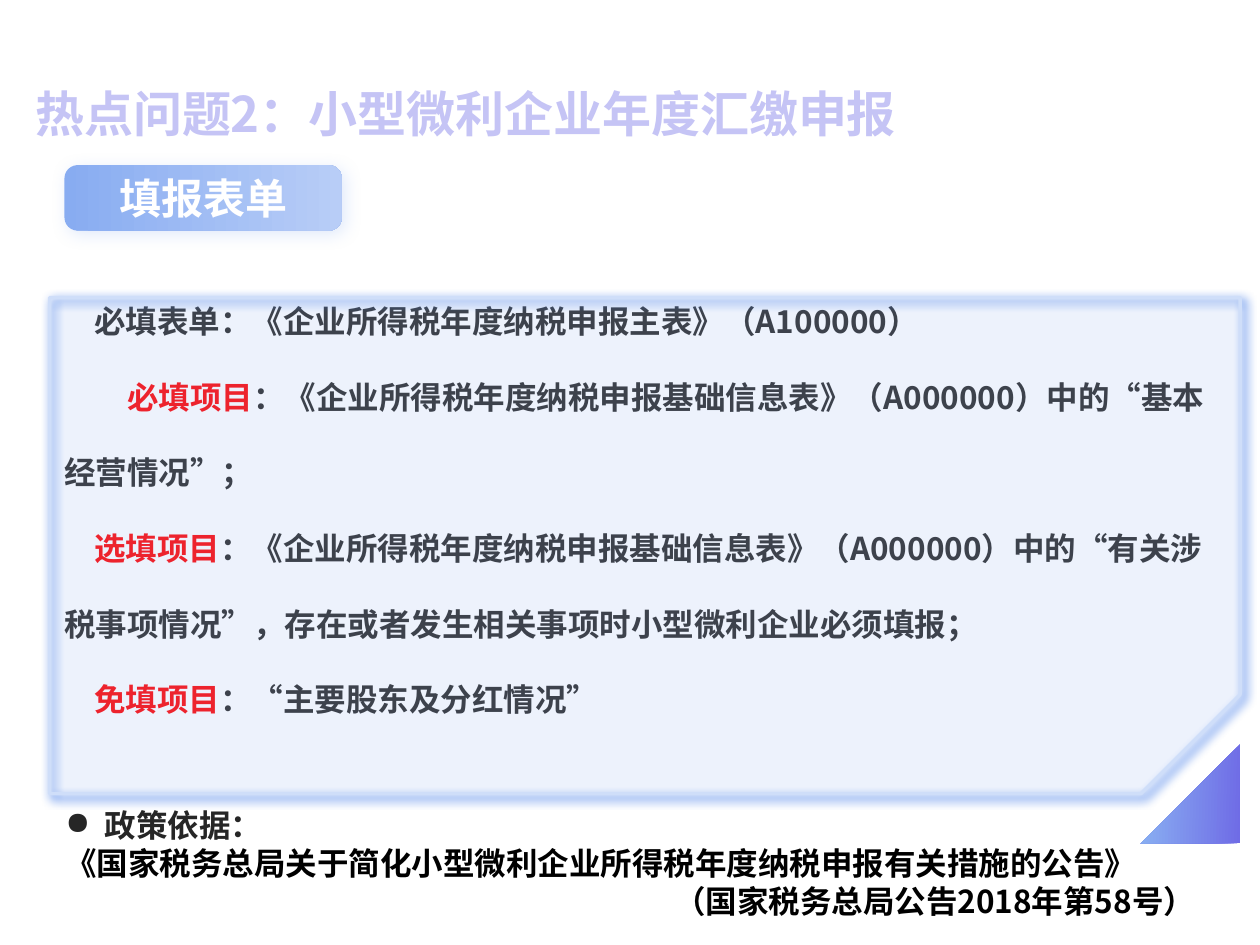
from dataclasses import dataclass

import pptx
import pptx.dml.color
import pptx.enum.shapes
import pptx.enum.text
import pptx.oxml
import pptx.oxml.ns
import pptx.util
from pptx.util import Cm

Align = pptx.enum.text.PP_ALIGN
Anchor = pptx.enum.text.MSO_ANCHOR
CJK = "Noto Sans CJK SC"
DARK, RED = "262626", "FF0000"
NS = 'xmlns:a="http://schemas.openxmlformats.org/drawingml/2006/main"'


@dataclass
class Item:
    label: str
    text: str
    color: str = RED
    indent: float = 0.6


@dataclass
class Glow:
    color: str
    alpha: int
    blur: float


ITEMS = [
    Item("必填表单", "：《企业所得税年度纳税申报主表》（A100000）", DARK),
    Item("必填项目", "：《企业所得税年度纳税申报基础信息表》（A000000）中的“基本经营情况”；",
         indent=1.27),
    Item("选填项目", "：《企业所得税年度纳税申报基础信息表》（A000000）中的“有关涉税事项情况”，"
         "存在或者发生相关事项时小型微利企业必须填报；"),
    Item("免填项目", "：“主要股东及分红情况”"),
]


def rgb(code: str):
    return pptx.dml.color.RGBColor.from_string(code)


def xml(text: str):
    """Parse one a: element, given without its namespace declaration."""
    head, rest = text.split(" ", 1)
    return pptx.oxml.parse_xml(f"{head} {NS} {rest}")


def write(par, text: str, *, size=18, color=DARK, font=CJK):
    run = par.add_run()
    run.text = text
    run.font.size = pptx.util.Pt(size)
    run.font.bold = True
    run.font.color.rgb = rgb(color)
    run.font.name = font
    run.font._element.append(xml(f'<a:ea typeface="{CJK}"/>'))
    return run


def lay(par, *, left=0.0, first=0.0, bullet="", align=Align.LEFT, space=1.0):
    """Set the indents (cm), bullet, alignment and spacing of a paragraph."""
    par.alignment = align
    par.line_spacing = space
    par.space_before = par.space_after = pptx.util.Pt(0)
    props = par._p.get_or_add_pPr()
    props.set("marL", str(Cm(left)))
    props.set("indent", str(Cm(first)))
    props.append(xml(f'<a:buChar char="{bullet}"/>' if bullet else "<a:buNone />"))


def place(shape, left: float, top: float, width: float, height: float):
    shape.left, shape.top = Cm(left), Cm(top)
    shape.width, shape.height = Cm(width), Cm(height)


def frame(shape, anchor=Anchor.TOP, inset=True):
    """Return the wrapped text frame, with or without its default insets."""
    box = shape.text_frame
    box.word_wrap = True
    box.auto_size = pptx.enum.text.MSO_AUTO_SIZE.NONE
    box.vertical_anchor = anchor
    if not inset:
        box.margin_left = box.margin_right = box.margin_top = box.margin_bottom = 0
    return box


def shade(shape, start: str, end: str, *, stop=1.0, angle=0):
    shape.fill.gradient()
    shape.fill.gradient_angle = angle
    for mark, color, pos in zip(shape.fill.gradient_stops, (start, end), (0, stop)):
        mark.color.rgb = rgb(color)
        mark.position = pos
    shape.line.fill.background()


def glow(shape, look: Glow):
    props = shape._element.spPr
    props.find(pptx.oxml.ns.qn("a:effectLst")).append(xml(
        f'<a:outerShdw blurRad="{pptx.util.Pt(look.blur)}" dist="{pptx.util.Pt(3)}"'
        f' dir="2700000" algn="tl" rotWithShape="0"><a:srgbClr val="{look.color}">'
        f'<a:alpha val="{look.alpha * 1000}"/></a:srgbClr></a:outerShdw>'))


def outline(slide, points: list):
    """Draw a closed polygon through points in cm."""
    pen = slide.shapes.build_freeform(*points[0], scale=Cm(1))
    pen.add_line_segments(points[1:], close=True)
    shape = pen.convert_to_shape()
    shape.shadow.inherit = False
    return shape


def main():
    deck = pptx.Presentation()
    deck.slide_width, deck.slide_height = Cm(25.4), Cm(19.05)
    slide = deck.slides.add_slide(deck.slide_layouts[1])
    title, body = slide.placeholders

    place(title, 0.71, 1.73, 22.07, 1.14)
    par = frame(title, Anchor.BOTTOM, inset=False).paragraphs[0]
    lay(par, space=1.5)
    run = write(par, "热点问题2：小型微利企业年度汇缴申报", size=28, color="C5C4F5")
    run.font._element.insert(0, xml(
        f'<a:ln w="{pptx.util.Pt(1.75)}"><a:solidFill><a:srgbClr val="6F6CE6"/>'
        "</a:solidFill></a:ln>"))

    place(body, 1.3, 5.33, 23.34, 6.81)
    box = frame(body, inset=False)
    for num, item in enumerate(ITEMS):
        par = box.add_paragraph() if num else box.paragraphs[0]
        lay(par, first=item.indent, space=2.0)
        write(par, item.label, color=item.color)
        write(par, item.text)

    corner = outline(slide, [(25.4, 14.63), (25.4, 16.66), (23.37, 16.66)])
    shade(corner, "6F6CE6", "88ACF1", stop=0.94, angle=178)

    panel = outline(slide, [(0.84, 5.72), (25.1, 5.72), (25.1, 14.15),
                            (23.37, 15.95), (0.84, 15.95)])
    panel.fill.solid()
    panel.fill.fore_color.rgb = rgb("FFFFFF")
    tint = panel._element.spPr.find(".//" + pptx.oxml.ns.qn("a:srgbClr"))
    tint.append(xml('<a:alpha val="10000"/>'))
    panel.line.color.rgb = rgb("CFDEF9")
    panel.line.width = pptx.util.Pt(2)
    glow(panel, Glow("3471E7", 10, 6))

    kind = pptx.enum.shapes.MSO_SHAPE.ROUNDED_RECTANGLE
    badge = slide.shapes.add_shape(kind, Cm(1.3), Cm(3.33), Cm(5.59), Cm(1.32))
    badge.adjustments[0] = 0.2
    badge.shadow.inherit = False
    shade(badge, "88ACF1", "B8CDF7")
    glow(badge, Glow("88ACF1", 25, 10))
    par = frame(badge, Anchor.MIDDLE, inset=False).paragraphs[0]
    lay(par, align=Align.CENTER)
    write(par, "填报表单", size=24, color="FFFFFF", font="Arial")

    basis = slide.shapes.add_textbox(Cm(1.07), Cm(16.13), Cm(23.27), Cm(2.57))
    box = frame(basis)
    par = box.paragraphs[0]
    lay(par, left=0.79, first=-0.79, bullet="●")
    write(par, "政策依据：")
    for text, align in (
        ("《国家税务总局关于简化小型微利企业所得税年度纳税申报有关措施的公告》", Align.LEFT),
        ("（国家税务总局公告2018年第58号）", Align.RIGHT),
    ):
        par = box.add_paragraph()
        lay(par, align=align)
        write(par, text, color="000000")

    deck.save("out.pptx")


if __name__ == "__main__":
    main()
